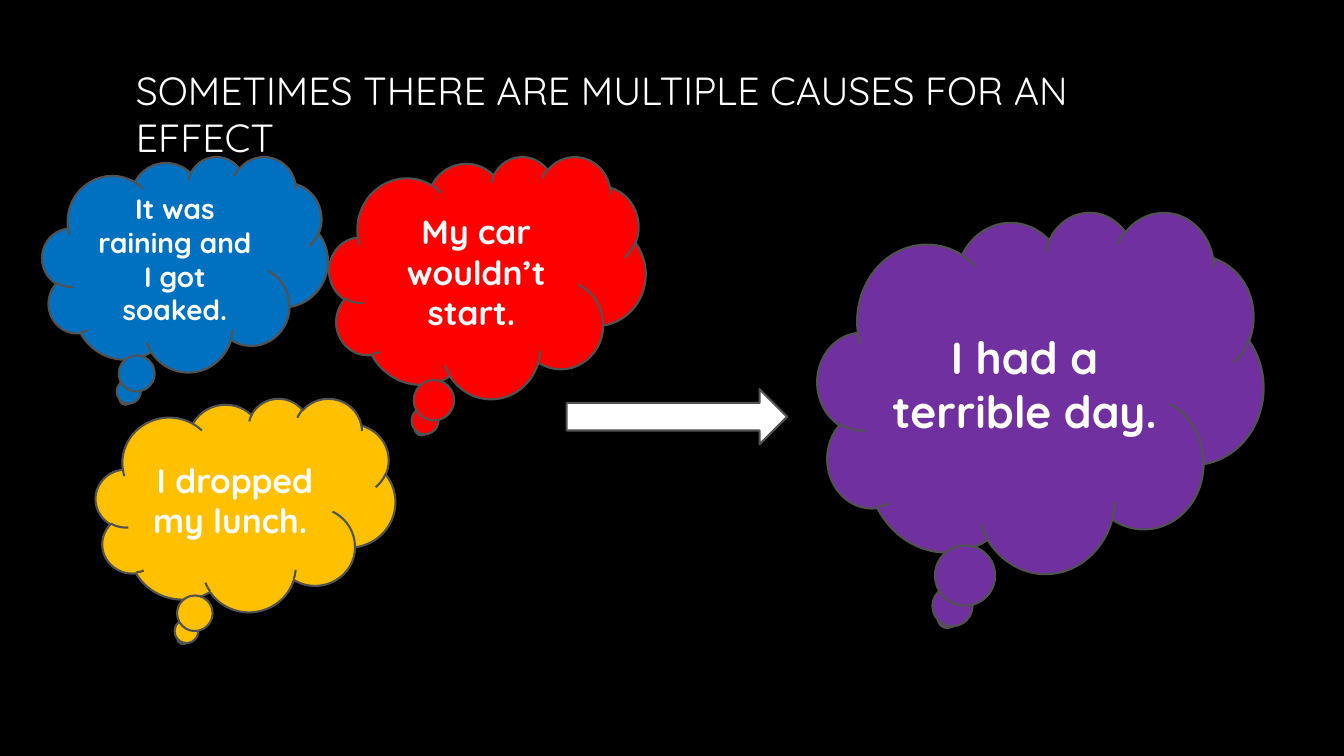
from dataclasses import dataclass

from pptx import Presentation
from pptx.dml.color import RGBColor
from pptx.enum.shapes import MSO_SHAPE
from pptx.enum.text import MSO_ANCHOR, PP_ALIGN
from pptx.util import Pt

CLOUD = MSO_SHAPE.CLOUD_CALLOUT
ARROW = MSO_SHAPE.RIGHT_ARROW
MIDDLE = MSO_ANCHOR.MIDDLE
LEFT = PP_ALIGN.LEFT
CENTER = PP_ALIGN.CENTER


@dataclass(frozen=True)
class Theme:
    font: str = "Quicksand"
    background: str = "000000"
    light: str = "FFFFFF"
    outline: str = "525252"
    rain: str = "0070C0"
    car: str = "FF0000"
    lunch: str = "FFC000"
    effect: str = "7030A0"
    outline_width: float = 1.5
    title_size: int = 28
    small_size: int = 20
    cause_size: int = 24
    effect_size: int = 32


THEME = Theme()


def rgb(color):
    return RGBColor.from_string(color)


def write(frame, words, size, align, bold):
    frame.word_wrap = True
    frame.vertical_anchor = MIDDLE
    paragraph = frame.paragraphs[0]
    paragraph.alignment = align
    run = paragraph.add_run()
    run.text = words
    run.font.name = THEME.font
    run.font.size = Pt(size)
    run.font.bold = bold
    run.font.color.rgb = rgb(THEME.light)


def add_title(slide, box, words):
    title = slide.shapes.add_textbox(*map(Pt, box))
    write(title.text_frame, words, THEME.title_size, LEFT, False)


def add_outlined(slide, preset, box, color):
    figure = slide.shapes.add_shape(preset, *map(Pt, box))
    figure.shadow.inherit = False
    figure.fill.solid()
    figure.fill.fore_color.rgb = rgb(color)
    figure.line.color.rgb = rgb(THEME.outline)
    figure.line.width = Pt(THEME.outline_width)
    return figure


def add_thought(slide, box, words, color, size):
    cloud = add_outlined(slide, CLOUD, box, color)
    write(cloud.text_frame, words, size, CENTER, True)


def add_causes(slide, box):
    left, top = box
    causes = [
        ((0, 0, 204, 154), "It was raining and I got soaked.", THEME.rain, THEME.small_size),
        ((205, 0, 226, 173), "My car wouldn’t start. ", THEME.car, THEME.cause_size),
        ((38.2, 172.8, 214, 152.5), "I dropped my lunch. ", THEME.lunch, THEME.cause_size),
    ]
    for (x, y, width, height), words, color, size in causes:
        add_thought(slide, (left + x, top + y, width, height), words, color, size)


def build_slide(deck):
    slide = deck.slides.add_slide(deck.slide_layouts[6])
    slide.background.fill.solid()
    slide.background.fill.fore_color.rgb = rgb(THEME.background)
    add_title(slide, (90, 6, 780, 150), "SOMETIMES THERE ARE MULTIPLE CAUSES FOR AN EFFECT")
    add_causes(slide, (30.2, 111.6))
    add_outlined(slide, ARROW, (404.8, 278, 157.5, 39.4), THEME.light)
    add_thought(slide, (584, 151.2, 318.5, 258), "I had a terrible day. ", THEME.effect, THEME.effect_size)


def main():
    deck = Presentation()
    deck.slide_width = Pt(960)
    deck.slide_height = Pt(540)
    build_slide(deck)
    deck.save("out.pptx")


if __name__ == "__main__":
    main()
